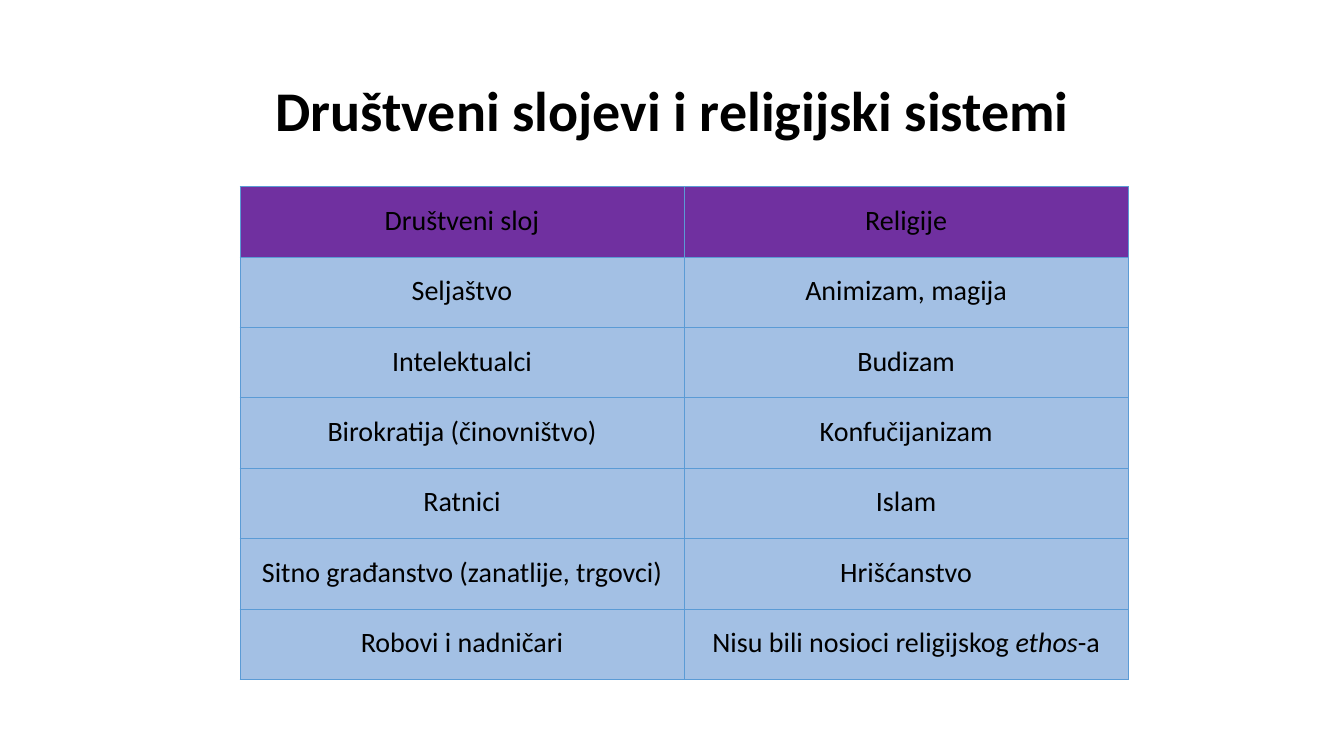
import pptx
import pptx.util
import pptx.dml.color
import pptx.enum.text
import pptx.oxml
import pptx.oxml.ns

Inches = pptx.util.Inches
Pt = pptx.util.Pt
Align = pptx.enum.text.PP_ALIGN
Anchor = pptx.enum.text.MSO_ANCHOR
Color = pptx.dml.color.RGBColor.from_string

hues = {"text": "000000", "head": "7030A0", "body": "A3C0E4", "line": "5B9BD5"}


def write(frame, text, size=20, bold=False, space=1.5):
    para = frame.paragraphs[0]
    para.alignment = Align.CENTER
    para.line_spacing = space
    for i, part in enumerate(text.split("*")):
        run = para.add_run()
        run.text = part
        run.font.name = "Calibri"
        run.font.size = Pt(size)
        run.font.bold = bold
        run.font.italic = i % 2 == 1
        run.font.color.rgb = Color(hues["text"])


def border(cell):
    props = cell._tc.get_or_add_tcPr()
    for i, side in enumerate(("lnL", "lnR", "lnT", "lnB")):
        line = pptx.oxml.parse_xml(
            f'<a:{side} {pptx.oxml.ns.nsdecls("a")} w="{Pt(0.5)}"><a:solidFill>'
            f'<a:srgbClr val="{hues["line"]}"/></a:solidFill></a:{side}>')
        props.insert(i, line)


deck = pptx.Presentation()
deck.slide_width = Inches(13.33)
deck.slide_height = Inches(7.5)
slide = deck.slides.add_slide(deck.slide_layouts[6])

title = slide.shapes.add_textbox(Inches(0.92), Inches(0.4), Inches(11.5), Inches(1.45))
title.text_frame.word_wrap = True
title.text_frame.vertical_anchor = Anchor.MIDDLE
write(title.text_frame, "Društveni slojevi i religijski sistemi", size=40, bold=True, space=0.9)

rows = [
    ("Društveni sloj", "Religije"),
    ("Seljaštvo", "Animizam, magija"),
    ("Intelektualci", "Budizam"),
    ("Birokratija (činovništvo)", "Konfučijanizam"),
    ("Ratnici", "Islam"),
    ("Sitno građanstvo (zanatlije, trgovci)", "Hrišćanstvo"),
    ("Robovi i nadničari", "Nisu bili nosioci religijskog *ethos*-a"),
]
table = slide.shapes.add_table(
    len(rows), 2, Inches(2.38), Inches(1.85), Inches(8.81), Inches(4.89)).table

for r, row in enumerate(rows):
    for c, text in enumerate(row):
        cell = table.cell(r, c)
        cell.margin_left = cell.margin_right = Inches(0.07)
        cell.margin_top = cell.margin_bottom = 0
        cell.vertical_anchor = Anchor.TOP
        cell.fill.solid()
        cell.fill.fore_color.rgb = Color(hues["body" if r else "head"])
        border(cell)
        write(cell.text_frame, text)

deck.save("out.pptx")
